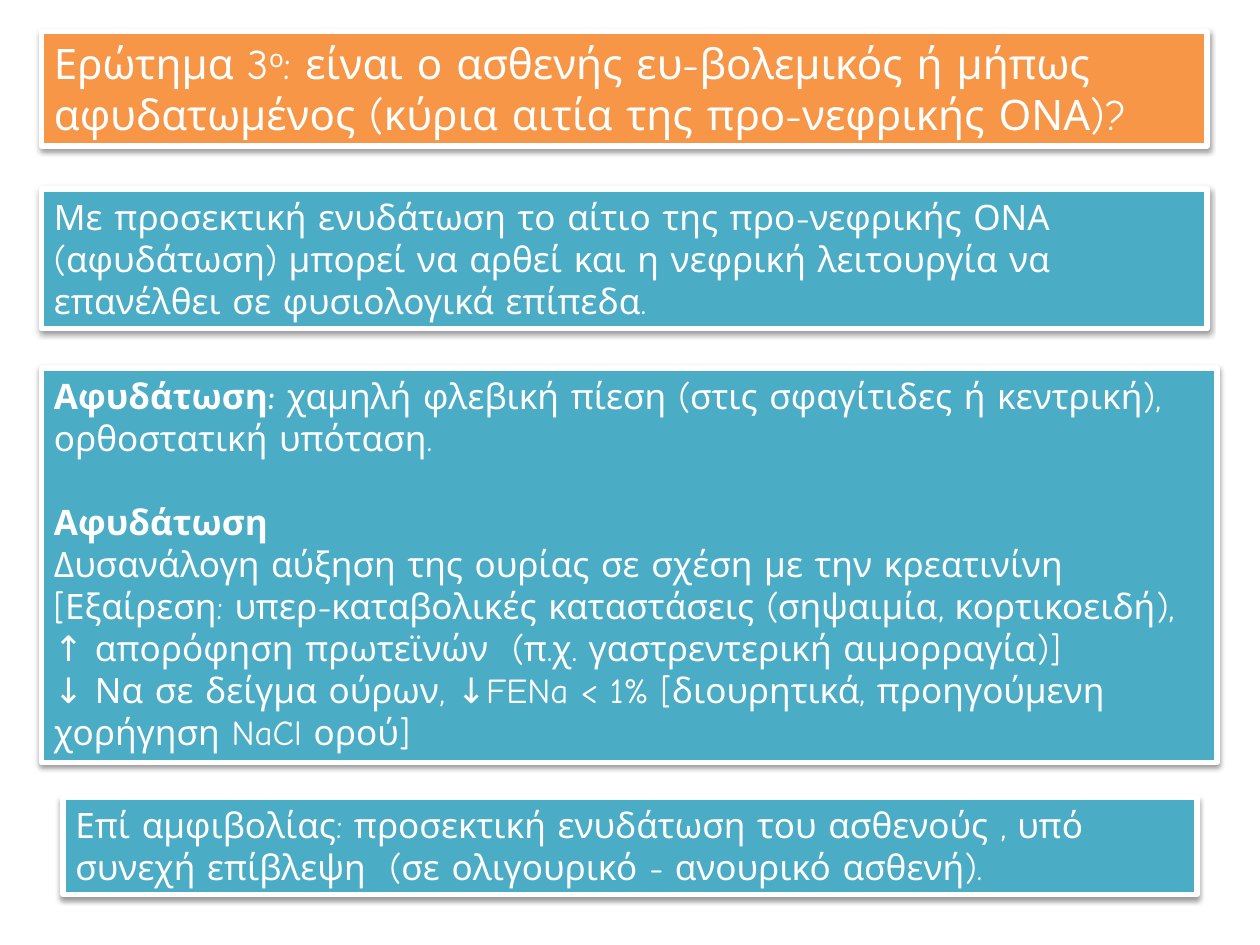
from lxml.etree import SubElement
from pptx import Presentation
from pptx.dml.color import RGBColor
from pptx.enum.lang import MSO_LANGUAGE_ID
from pptx.enum.shapes import MSO_SHAPE
from pptx.enum.text import MSO_ANCHOR, MSO_AUTO_SIZE, PP_ALIGN
from pptx.oxml.ns import qn
from pptx.util import Inches, Pt

FONT, ARROW_FONT = "Comic Neue", "DejaVu Sans"
WHITE, ORANGE, TEAL = "FFFFFF", "F79646", "4BACC6"
SLIDE_WIDTH, SLIDE_HEIGHT = 10, 7.5
LINE_GAP = 24

PANELS = [
    {"area": (0.33, 0.25, 9.25, 0.91), "fill": ORANGE, "size": 24, "paragraphs": [
        [("Ερώτημα 3", ""), ("ο", "superscript"),
         (": είναι ο ασθενής ευ-βολεμικός ή μήπως αφυδατωμένος "
          "(κύρια αιτία της προ-νεφρικής ΟΝΑ)?", "")],
    ]},
    {"area": (0.33, 1.5, 9.25, 1.11), "fill": TEAL, "size": 20, "paragraphs": [
        [("Με προσεκτική ενυδάτωση το αίτιο της προ-νεφρικής ΟΝΑ (αφυδάτωση) μπορεί "
          "να αρθεί και η νεφρική λειτουργία να επανέλθει σε φυσιολογικά επίπεδα.", "")],
    ]},
    {"area": (0.33, 2.92, 9.33, 3.13), "fill": TEAL, "size": 20, "gap_after": 0, "paragraphs": [
        [("Αφυδάτωση:", "bold"),
         (" χαμηλή φλεβική πίεση (στις σφαγίτιδες ή κεντρική), ορθοστατική υπόταση.", "")],
        [("Αφυδάτωση", "bold")],
        [("Δυσανάλογη αύξηση της ουρίας σε σχέση με την κρεατινίνη  [Εξαίρεση: "
          "υπερ-καταβολικές καταστάσεις (σηψαιμία, κορτικοειδή), ", ""),
         ("↑", "arrow"),
         (" απορόφηση πρωτεϊνών  (π.χ. γαστρεντερική αιμορραγία)]", "")],
        [("↓", "arrow"), (" Να σε δείγμα ούρων, ", ""), ("↓", "arrow"),
         ("FENa < 1% [διουρητικά, προηγούμενη χορήγηση NaCl ορού]", "")],
    ]},
    {"area": (0.5, 6.33, 9, 0.77), "fill": TEAL, "size": 20, "paragraphs": [
        [("Επί αμφιβολίας: προσεκτική ενυδάτωση του ασθενούς , υπό συνεχή επίβλεψη  "
          "(σε ολιγουρικό - ανουρικό ασθενή).", "")],
    ]},
]


def color(value):
    return RGBColor.from_string(value)


def add_shadow(box):
    box.shadow.inherit = False
    effects = box._element.spPr.find(qn("a:effectLst"))
    shadow = SubElement(effects, qn("a:outerShdw"), blurRad=str(Pt(3.1)),
                        dist=str(Pt(1.6)), dir="5400000", rotWithShape="0")
    tone = SubElement(shadow, qn("a:srgbClr"), val="000000")
    SubElement(tone, qn("a:alpha"), val="38000")


def add_span(para, text, style, size):
    span = para.add_run()
    span.text = text
    span.font.name = ARROW_FONT if style == "arrow" else FONT
    span.font.language_id = MSO_LANGUAGE_ID.GREEK
    span.font.size = Pt(size)
    span.font.bold = style == "bold"
    span.font.color.rgb = color(WHITE)
    if style == "arrow":
        for script in ("a:ea", "a:cs", "a:sym"):
            span.font._element.get_or_add_latin()
        symbol_font = span.font._element.find(qn("a:latin"))
        symbol_font.addnext(symbol_font.makeelement(qn("a:ea"), {"typeface": ARROW_FONT}))
    if style == "superscript":
        span.font._element.set("baseline", "30000")


def add_panel(page, panel):
    box = page.shapes.add_shape(MSO_SHAPE.RECTANGLE, *map(Inches, panel["area"]))
    box.fill.solid()
    box.fill.fore_color.rgb = color(panel["fill"])
    box.line.color.rgb = color(WHITE)
    box.line.width = Pt(3)
    add_shadow(box)
    frame = box.text_frame
    frame.word_wrap = True
    frame.auto_size = MSO_AUTO_SIZE.SHAPE_TO_FIT_TEXT
    frame.vertical_anchor = MSO_ANCHOR.TOP
    for index, spans in enumerate(panel["paragraphs"]):
        para = frame.add_paragraph() if index else frame.paragraphs[0]
        para.alignment = PP_ALIGN.LEFT
        if index == panel.get("gap_after"):
            para.space_after = Pt(LINE_GAP)
        for text, style in spans:
            add_span(para, text, style, panel["size"])


def main():
    deck = Presentation()
    deck.slide_width, deck.slide_height = Inches(SLIDE_WIDTH), Inches(SLIDE_HEIGHT)
    page = deck.slides.add_slide(deck.slide_layouts[6])
    for panel in PANELS:
        add_panel(page, panel)
    deck.save("out.pptx")


if __name__ == "__main__":
    main()
